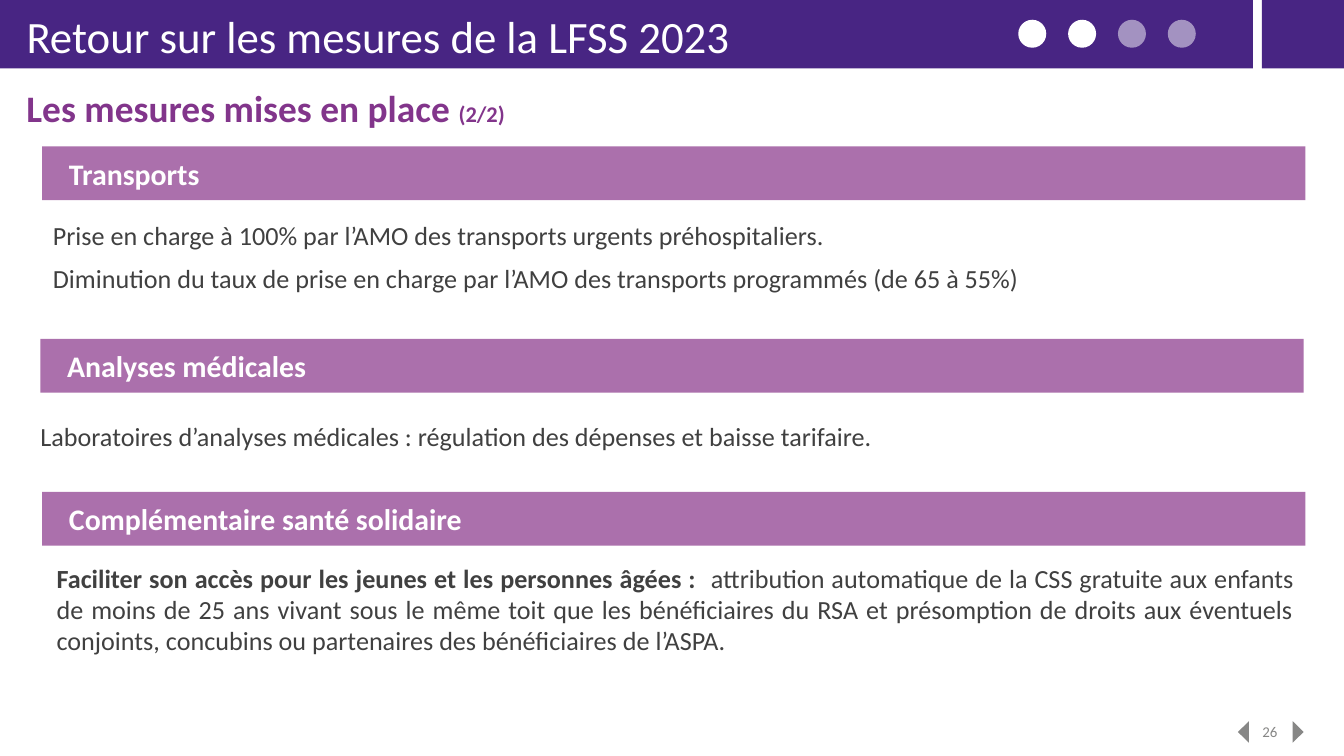
import pptx
import pptx.dml.color
import pptx.enum.shapes
import pptx.enum.text
import pptx.oxml
import pptx.oxml.ns
import pptx.util

Pt = pptx.util.Pt
SHAPE = pptx.enum.shapes.MSO_SHAPE
ALIGN = pptx.enum.text.PP_ALIGN
ANCHOR = pptx.enum.text.MSO_ANCHOR

COLORS = {
    "indigo": "482583",
    "plum": "82358B",
    "mauve": "AB70AC",
    "white": "FFFFFF",
    "body": "404040",
    "gray": "878786",
}
FONT = "Calibri"


def rgb(name):
    return pptx.dml.color.RGBColor.from_string(COLORS[name])


def write_text(shape, paragraphs, size, color, bold=False, align=ALIGN.LEFT,
               anchor=ANCHOR.TOP, margins=(0, 0), space_after=0):
    frame = shape.text_frame
    frame.word_wrap = True
    frame.auto_size = pptx.enum.text.MSO_AUTO_SIZE.NONE
    frame.vertical_anchor = anchor
    frame.margin_left = frame.margin_right = Pt(margins[0])
    frame.margin_top = frame.margin_bottom = Pt(margins[1])
    for index, pieces in enumerate(paragraphs):
        paragraph = frame.add_paragraph() if index else frame.paragraphs[0]
        paragraph.alignment = align
        paragraph.space_after = Pt(space_after)
        for text, changes in pieces:
            run = paragraph.add_run()
            run.text = text
            run.font.name = FONT
            run.font.size = Pt(changes.get("size", size))
            run.font.bold = changes.get("bold", bold)
            run.font.color.rgb = rgb(color)


class SlideBuilder:
    def __init__(self, slide):
        self.slide = slide

    def title(self, text, left, top, width, height):
        shape = self.slide.shapes.title
        shape.left, shape.top, shape.width, shape.height = map(Pt, (left, top, width, height))
        write_text(shape, [[(text, {})]], size=24, color="white")
        self.slide.shapes.element.append(shape.element)

    def shape(self, kind, left, top, width, height, color, rotation=0, alpha=None, parent=None):
        shapes = (parent or self.slide).shapes
        shape = shapes.add_shape(kind, *map(Pt, (left, top, width, height)))
        shape.shadow.inherit = False
        shape.fill.solid()
        shape.fill.fore_color.rgb = rgb(color)
        shape.line.fill.background()
        shape.rotation = rotation
        if alpha is not None:
            fill_color = shape.element.spPr.find(".//" + pptx.oxml.ns.qn("a:srgbClr"))
            fill_color.append(pptx.oxml.parse_xml(
                f'<a:alpha {pptx.oxml.ns.nsdecls("a")} val="{alpha * 1000}"/>'))
        return shape

    def text(self, paragraphs, left, top, width, height, **style):
        shape = self.slide.shapes.add_textbox(*map(Pt, (left, top, width, height)))
        write_text(shape, paragraphs, **style)

    def section(self, heading, left, top):
        band = self.shape(SHAPE.RECTANGLE, left, top, 676.8, 28.8, "mauve")
        write_text(band, [[(heading, {})]], size=16, color="white", bold=True,
                   anchor=ANCHOR.MIDDLE, margins=(14.4, 8.64))

    def body(self, paragraphs, left, top, height):
        self.text(paragraphs, left, top, 663.12, height, size=14, color="body",
                  align=ALIGN.JUSTIFY, space_after=6)

    def progress_dots(self, left, top, gap, alphas):
        group = self.slide.shapes.add_group_shape()
        for index, alpha in enumerate(alphas):
            self.shape(SHAPE.OVAL, left + index * gap, top, 15, 15, "white",
                       alpha=alpha, parent=group)


def main():
    presentation = pptx.Presentation()
    presentation.slide_width, presentation.slide_height = Pt(720), Pt(405)
    slide = presentation.slides.add_slide(presentation.slide_layouts[5])
    builder = SlideBuilder(slide)

    for left, width in ((0, 671.2), (676, 44)):
        builder.shape(SHAPE.RECTANGLE, left, 0, width, 36.6, "indigo")
    builder.title("Retour sur les mesures de la LFSS 2023", 14.2, 4.5, 653, 29)
    builder.progress_dots(545.5, 10.6, 26.7, (None, None, 50, 50))
    builder.text([[("Les mesures mises en place ", {}), ("(2/2)", {"size": 12})]],
                 14.2, 45.4, 653, 20, size=20, color="plum", bold=True)

    builder.section("Transports", 22.6, 78.4)
    builder.body([
        [("Prise en charge à 100% par l’AMO des transports urgents préhospitaliers.", {})],
        [("Diminution du taux de prise en charge par l’AMO des transports programmés "
          "(de 65 à 55%)", {})],
    ], 28.3, 117.6, 40)

    builder.section("Analyses médicales", 21.6, 181.6)
    builder.body([
        [("Laboratoires d’analyses médicales : régulation des dépenses et baisse tarifaire.", {})],
    ], 21.6, 225.4, 17)

    builder.section("Complémentaire santé solidaire", 22.6, 263.6)
    builder.body([[
        ("Faciliter son accès pour les jeunes et les personnes âgées :  ", {"bold": True}),
        ("attribution automatique de la CSS gratuite aux enfants de moins de 25 ans vivant "
         "sous le même toit que les bénéficiaires du RSA et présomption de droits aux éventuels "
         "conjoints, concubins ou partenaires des bénéficiaires de l’ASPA.", {}),
    ]], 30.3, 301, 51)

    builder.text([[("26", {})]], 664.5, 375.2, 31.7, 21.6, size=8, color="gray",
                 align=ALIGN.CENTER, anchor=ANCHOR.BOTTOM)
    for left, rotation in ((660.4, 270), (689.7, 90)):
        builder.shape(SHAPE.ISOSCELES_TRIANGLE, left, 389.2, 11.5, 5.9, "gray", rotation=rotation)

    presentation.save("out.pptx")


if __name__ == "__main__":
    main()
